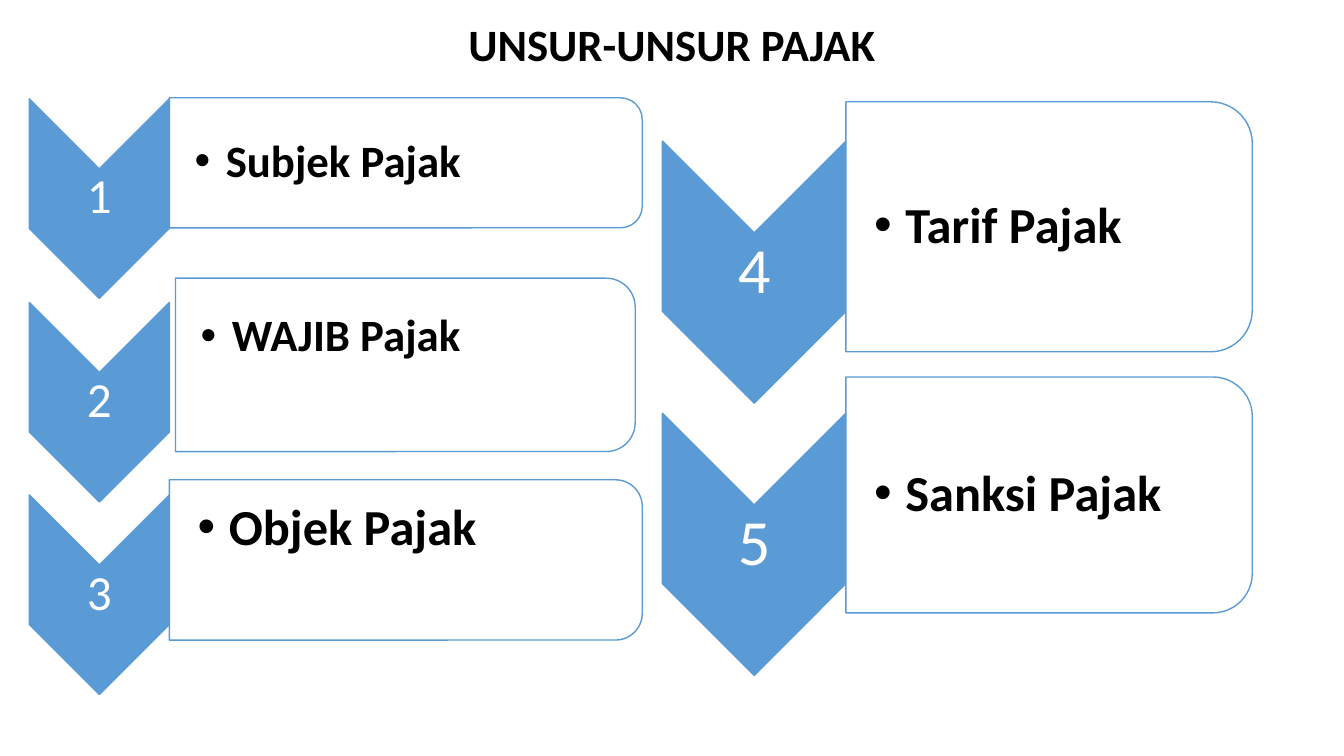
from lxml import etree
from pptx import Presentation
from pptx import util as u
from pptx.dml.color import RGBColor
from pptx.enum import shapes, text
from pptx.oxml.ns import qn

PX = 9144
WIDTH, HEIGHT = 1333, 750
COLORS = {"blue": "5B9BD5", "white": "FFFFFF", "black": "000000"}
FONT = "Calibri"
LINE_BREAK_RATIO = 1.7

LEFT_COLUMN = {
    "chevron": (29, 139, 198), "number_size": 35, "number_height": 59, "padding": 2,
    "rows": [
        ("1", 98, "Subjek Pajak", 32, False, (168, 97, 469, 129)),
        ("2", 300, "WAJIB Pajak", 32, True, (174, 276, 456, 172)),
        ("3", 491, "Objek Pajak", 36, True, (168, 476, 469, 159)),
    ],
}
RIGHT_COLUMN = {
    "chevron": (657, 182, 260), "number_size": 46, "number_height": 78, "padding": 3,
    "rows": [
        ("4", 140, "Tarif Pajak", 36, False, (839, 101, 403, 248)),
        ("5", 410, "Sanksi Pajak", 36, False, (839, 374, 403, 234)),
    ],
}


def px(*lengths):
    return [u.Emu(round(length * PX)) for length in lengths]


def rgb(name):
    return RGBColor.from_string(COLORS[name])


def format_paragraph(paragraph, size, color, bold=False):
    paragraph.line_spacing = 0.9
    for run in paragraph.runs:
        run.font.name = FONT
        run.font.size = u.Pt(size)
        run.font.bold = bold
        run.font.color.rgb = rgb(color)


def add_bullet(paragraph, indent):
    paragraph.level = 1
    properties = paragraph._p.get_or_add_pPr()
    properties.set("marL", str(indent * PX))
    properties.set("indent", str(-indent * PX))
    etree.SubElement(properties, qn("a:buFont"), typeface="Arial")
    etree.SubElement(properties, qn("a:buChar"), char="•")


def add_turned_shape(group, kind, box, fill):
    left, top, width, height = box
    turned_left = left + (width - height) / 2
    turned_top = top + (height - width) / 2
    shape = group.shapes.add_shape(kind, *px(turned_left, turned_top, height, width))
    shape.rotation = 90
    shape.shadow.inherit = False
    shape.fill.solid()
    shape.fill.fore_color.rgb = rgb(fill)
    shape.line.color.rgb = rgb("blue")
    shape.line.width = u.Pt(1)
    return shape


def add_text(group, box, wording, insets):
    frame = group.shapes.add_textbox(*px(*box)).text_frame
    frame.word_wrap = True
    frame.vertical_anchor = text.MSO_ANCHOR.MIDDLE
    (frame.margin_left, frame.margin_top,
     frame.margin_right, frame.margin_bottom) = px(*insets)
    frame.text = wording
    return frame.paragraphs[0]


def add_chevron(group, box, number, column):
    add_turned_shape(group, shapes.MSO_SHAPE.CHEVRON, box, "blue")
    left, top, width, height = box
    number_height = column["number_height"]
    number_box = (left, top + (height - number_height) // 2, width, number_height)
    paragraph = add_text(group, number_box, number, [column["padding"]] * 4)
    paragraph.alignment = text.PP_ALIGN.CENTER
    format_paragraph(paragraph, column["number_size"], "white")


def add_card(group, box, label, size, raised, padding):
    card = add_turned_shape(group, shapes.MSO_SHAPE.ROUND_2_SAME_RECTANGLE, box, "white")
    fill_color = card._element.spPr.find(qn("a:solidFill"))[0]
    etree.SubElement(fill_color, qn("a:alpha"), val="90000")
    left, top, width, height = box
    rim = round(height / 20.5)
    label_box = (left, top + rim, width - rim, height - 2 * rim)
    bottom = padding + (size * LINE_BREAK_RATIO if raised else 0)
    left_inset = 25 if size == 32 else 28
    paragraph = add_text(group, label_box, label, (left_inset, padding, padding, bottom))
    format_paragraph(paragraph, size, "black", bold=True)
    add_bullet(paragraph, 31)


def add_column(slide, column):
    group = slide.shapes.add_group_shape()
    left, width, height = column["chevron"]
    for number, top, label, size, raised, card_box in column["rows"]:
        add_chevron(group, (left, top, width, height), number, column)
        add_card(group, card_box, label, size, raised, column["padding"])


def add_title(slide, box):
    title = slide.shapes.title
    title.left, title.top, title.width, title.height = px(*box)
    frame = title.text_frame
    frame.text = "UNSUR-UNSUR PAJAK"
    frame.vertical_anchor = text.MSO_ANCHOR.MIDDLE
    paragraph = frame.paragraphs[0]
    paragraph.alignment = text.PP_ALIGN.CENTER
    format_paragraph(paragraph, 32, "black", bold=True)


def main():
    presentation = Presentation()
    presentation.slide_width, presentation.slide_height = px(WIDTH, HEIGHT)
    slide = presentation.slides.add_slide(presentation.slide_layouts[5])
    add_title(slide, (0, 0, WIDTH, 93))
    for column in (LEFT_COLUMN, RIGHT_COLUMN):
        add_column(slide, column)
    presentation.save("out.pptx")


if __name__ == "__main__":
    main()
